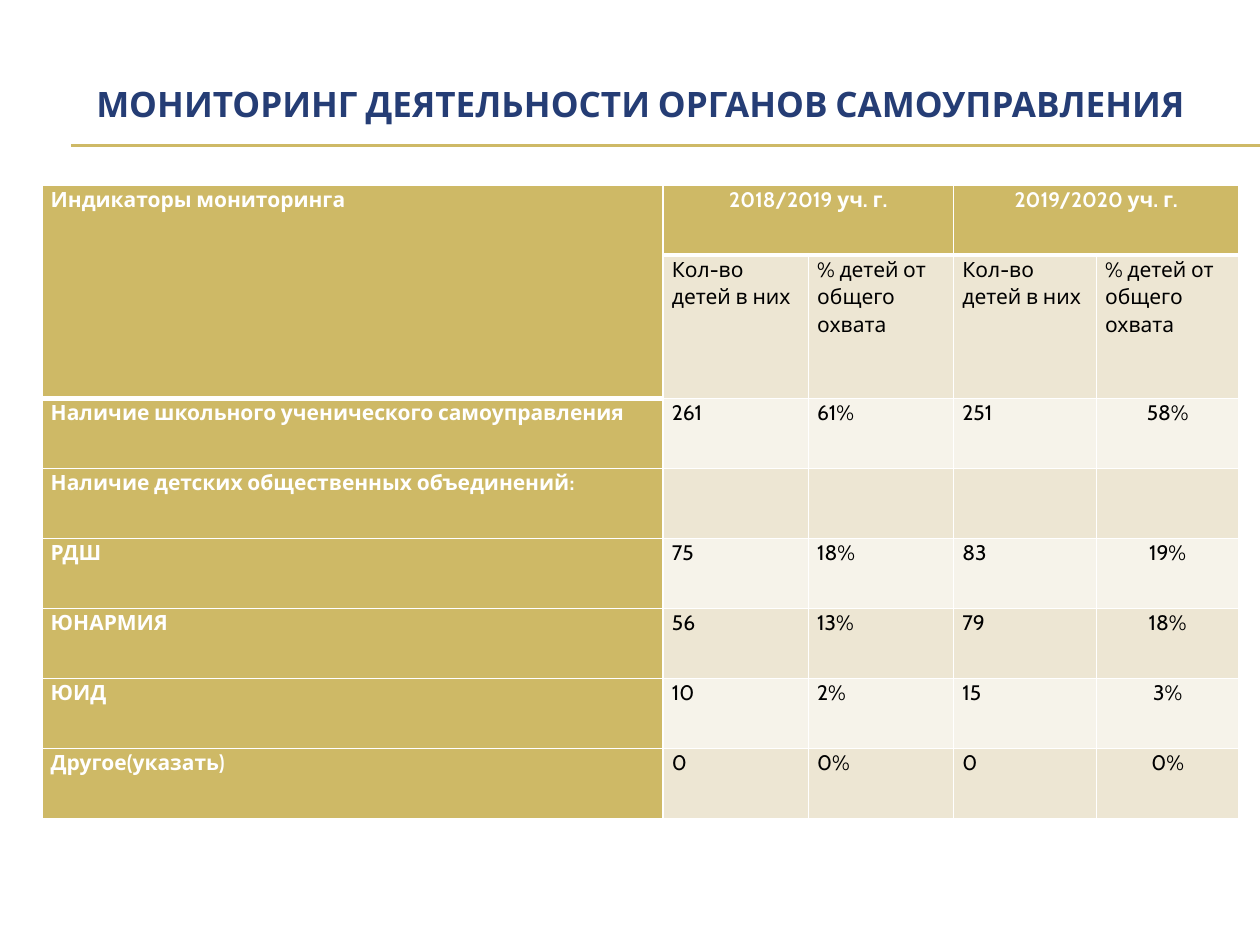
import pptx
import pptx.util
import pptx.dml.color
import pptx.enum.shapes
import pptx.enum.text
import pptx.oxml
import pptx.oxml.ns
from pptx.util import Pt

FONT = "Cabin"
GOLD, SAND, CREAM = "CEB966", "EDE6D3", "F6F3EA"
WHITE, BLACK, NAVY = "FFFFFF", "000000", "253D75"
CENTER = pptx.enum.text.PP_ALIGN.CENTER
LEFT = pptx.enum.text.PP_ALIGN.LEFT

COLUMN_WIDTHS = [355, 83, 83, 81.5, 81.5]
ROW_HEIGHTS = [40, 82] + [40] * 6
ROWS = [
    ["Индикаторы мониторинга", "2018/2019 уч. г.", "", "2019/2020 уч. г.", ""],
    [""] + ["Кол-во детей в них", "% детей от общего охвата"] * 2,
    ["Наличие школьного ученического самоуправления", "261", "61%", "251", "58%"],
    ["Наличие детских общественных объединений:", "", "", "", ""],
    ["РДШ", "75", "18%", "83", "19%"],
    ["ЮНАРМИЯ", "56", "13%", "79", "18%"],
    ["ЮИД", "10", "2%", "15", "3%"],
    ["Другое(указать)", "0", "0%", "0", "0%"],
]


def color(value):
    return pptx.dml.color.RGBColor.from_string(value)


def format_text(para, size, value, bold, align):
    para.alignment = align
    for span in para.runs:
        span.font.name = FONT
        span.font.size = Pt(size)
        span.font.bold = bold
        span.font.color.rgb = color(value)


def add_rule(page, left, top, right):
    rule = page.shapes.add_connector(
        pptx.enum.shapes.MSO_CONNECTOR.STRAIGHT, Pt(left), Pt(top), Pt(right), Pt(top))
    rule.line.color.rgb = color(GOLD)
    rule.line.width = Pt(0.75)
    rule._element.spPr.append(pptx.oxml.parse_xml(
        f'<a:effectLst {pptx.oxml.ns.nsdecls("a")}/>'))


def add_heading(page, left, top, width, height):
    for offset in (0, 0.7):
        add_rule(page, left + 16.5, top + height + offset, 720)
    box = page.shapes.add_textbox(Pt(left), Pt(top), Pt(width), Pt(height))
    frame = box.text_frame
    frame.word_wrap = True
    frame.vertical_anchor = pptx.enum.text.MSO_ANCHOR.MIDDLE
    frame.text = "МОНИТОРИНГ ДЕЯТЕЛЬНОСТИ ОРГАНОВ САМОУПРАВЛЕНИЯ"
    format_text(frame.paragraphs[0], 20, NAVY, True, CENTER)


def set_borders(cell, top, bottom):
    properties = cell._tc.get_or_add_tcPr()
    for side, width in (("L", 1), ("R", 1), ("T", top), ("B", bottom)):
        properties.append(pptx.oxml.parse_xml(
            f'<a:ln{side} {pptx.oxml.ns.nsdecls("a")} w="{Pt(width)}">'
            f'<a:solidFill><a:srgbClr val="{WHITE}"/></a:solidFill></a:ln{side}>'))


def fill_cell(cell, row, column, text):
    heading = row == 0 or column == 0
    below_heading = row == 1 or (row == 2 and column == 0)
    ends_heading = row == 0 or (row == 1 and column == 0)
    set_borders(cell, 3 if below_heading else 1, 3 if ends_heading else 1)
    cell.fill.solid()
    cell.fill.fore_color.rgb = color(GOLD if heading else SAND if row % 2 else CREAM)
    cell.margin_left = cell.margin_right = Pt(5)
    cell.margin_top = cell.margin_bottom = Pt(0)
    cell.text_frame.text = text
    para = cell.text_frame.paragraphs[0]
    para.line_spacing = 1.07
    centered = (row == 0 and column > 0) or (row > 1 and column == 4)
    format_text(para, 12, WHITE if heading else BLACK, heading,
                CENTER if centered else LEFT)


def add_indicators(page, left, top):
    table = page.shapes.add_table(
        len(ROWS), len(COLUMN_WIDTHS), Pt(left), Pt(top),
        Pt(sum(COLUMN_WIDTHS)), Pt(sum(ROW_HEIGHTS))).table
    for column, width in zip(table.columns, COLUMN_WIDTHS):
        column.width = Pt(width)
    for row, height in zip(table.rows, ROW_HEIGHTS):
        row.height = Pt(height)
    for row, texts in enumerate(ROWS):
        for column, text in enumerate(texts):
            fill_cell(table.cell(row, column), row, column, text)
    table.cell(0, 0).merge(table.cell(1, 0))
    for column in (1, 3):
        table.cell(0, column).merge(table.cell(0, column + 1))


def main():
    deck = pptx.Presentation()
    deck.slide_width, deck.slide_height = Pt(720), Pt(540)
    page = deck.slides.add_slide(deck.slide_layouts[6])
    add_heading(page, 24, 36, 684, 46.8)
    add_indicators(page, 24, 105.8)
    deck.save("out.pptx")


if __name__ == "__main__":
    main()
